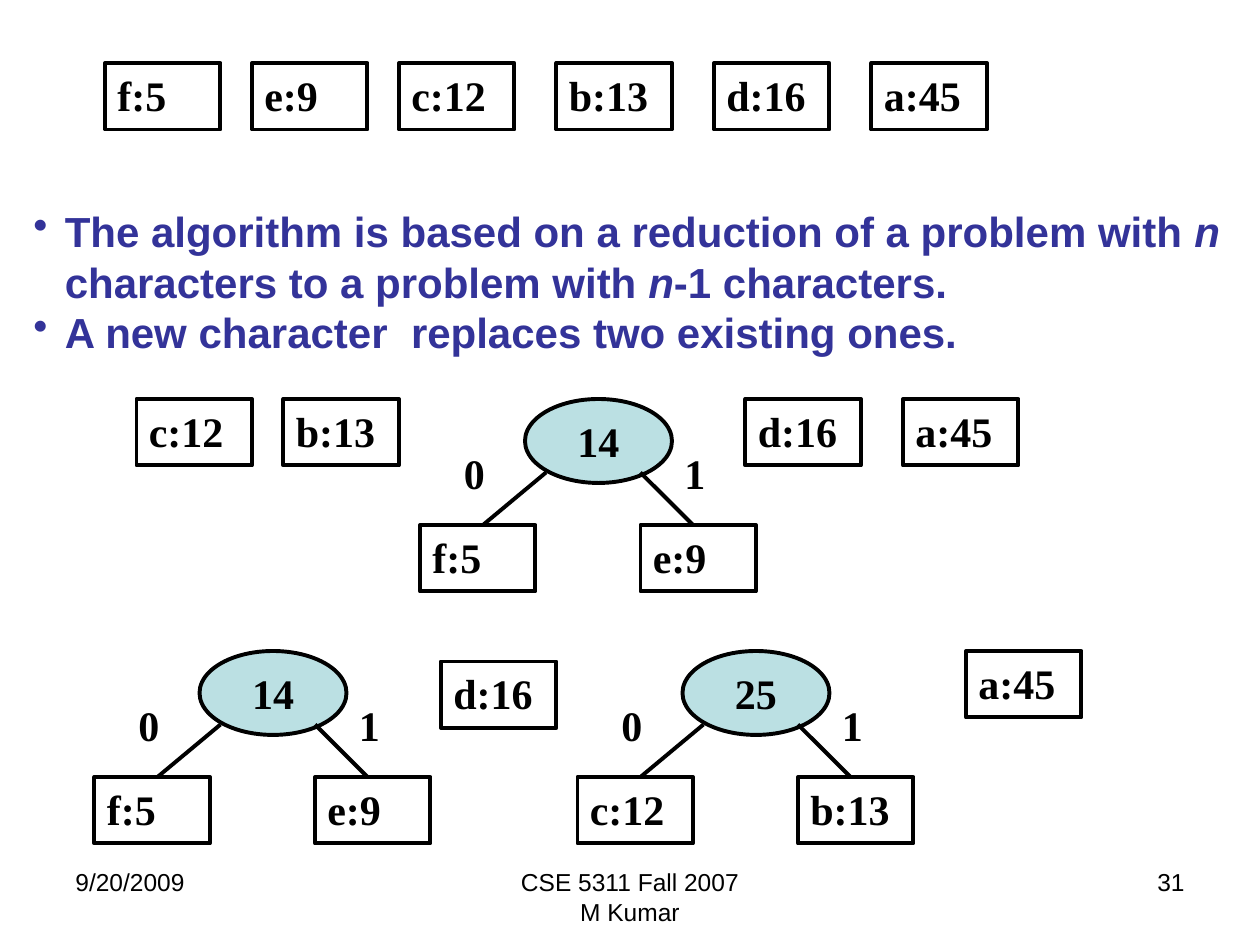
from dataclasses import dataclass

import pptx
import pptx.dml.color
import pptx.enum.shapes
import pptx.enum.text
import pptx.oxml
import pptx.oxml.ns
import pptx.util
from lxml import etree

Pt = pptx.util.Pt
RGB = pptx.dml.color.RGBColor.from_string
SHAPE = pptx.enum.shapes.MSO_SHAPE
ALIGN = pptx.enum.text.PP_ALIGN
FIT = pptx.enum.text.MSO_AUTO_SIZE
ANCHOR = pptx.enum.text.MSO_ANCHOR


@dataclass(frozen=True)
class Theme:
    ink: str = "000000"
    paper: str = "FFFFFF"
    node: str = "BBE0E3"
    statement: str = "333399"
    sans: str = "Arial"
    serif: str = "Times New Roman"
    body: float = 24
    footer: float = 14
    stroke: float = 2.25


THEME = Theme()
LEAF_WIDTH, LEAF_HEIGHT = 66, 38


def add_span(para, text, font, size, color, bold=False, italic=False):
    span = para.add_run()
    span.text = text
    span.font.name = font
    span.font.size = Pt(size)
    span.font.bold = bold
    span.font.italic = italic
    span.font.color.rgb = RGB(color)


def add_box(shapes, kind, left, top, width, height, text, line, fill=None):
    box = shapes.add_shape(kind, Pt(left), Pt(top), Pt(width), Pt(height))
    box.shadow.inherit = False
    if fill:
        box.fill.solid()
        box.fill.fore_color.rgb = RGB(fill)
    else:
        box.fill.background()
    box.line.color.rgb = RGB(line)
    box.line.width = Pt(THEME.stroke)
    para = box.text_frame.paragraphs[0]
    add_span(para, text, THEME.serif, THEME.body, THEME.ink, bold=True)
    return box


def add_text_box(shapes, text, left, top, width, line):
    """A box that grows with its left-aligned text."""
    box = add_box(shapes, SHAPE.RECTANGLE, left, top, width, LEAF_HEIGHT, text, line)
    box.text_frame.word_wrap = True
    box.text_frame.auto_size = FIT.SHAPE_TO_FIT_TEXT
    box.text_frame.vertical_anchor = ANCHOR.TOP
    box.text_frame.paragraphs[0].alignment = ALIGN.LEFT


def add_leaf(shapes, text, left, top):
    add_text_box(shapes, text, left, top, LEAF_WIDTH, THEME.ink)


def add_branch(shapes, start, end):
    branch = shapes.add_connector(
        pptx.enum.shapes.MSO_CONNECTOR.STRAIGHT, *map(Pt, start + end))
    branch.line.color.rgb = RGB(THEME.ink)
    branch.line.width = Pt(THEME.stroke)
    etree.SubElement(branch.element.spPr, pptx.oxml.ns.qn("a:effectLst"))


def add_leaves(shapes, top, leaves):
    for text, left in leaves:
        add_leaf(shapes, text, left, top)


def add_tree(shapes, left, top, total, low, high):
    """A merged node with its 0 branch on the left and 1 branch on the right."""
    for bit, offset in (("1", 144), ("0", 18)):
        add_text_box(shapes, bit, left + offset, top + 24, 30, THEME.paper)
    root = add_box(shapes, SHAPE.OVAL, left + 60, top, 84, 48, total, THEME.ink, THEME.node)
    root.text_frame.word_wrap = False
    root.text_frame.vertical_anchor = ANCHOR.MIDDLE
    root.text_frame.paragraphs[0].alignment = ALIGN.CENTER
    for text, offset in ((low, 0), (high, 126)):
        add_leaf(shapes, text, left + offset, top + 72)
    for start, end in ((72, 36), (126, 156)):
        add_branch(shapes, (left + start, top + 42), (left + end, top + 72))


def add_statements(slide, left, top, width, height, statements):
    """Bulleted paragraphs; every second span of a statement is italic."""
    box = slide.shapes.add_textbox(Pt(left), Pt(top), Pt(width), Pt(height))
    frame = box.text_frame
    frame.word_wrap = True
    frame.auto_size = FIT.SHAPE_TO_FIT_TEXT
    for index, parts in enumerate(statements):
        para = frame.add_paragraph() if index else frame.paragraphs[0]
        para.level = 2
        para.line_spacing = Pt(28.8)
        for number, text in enumerate(parts):
            add_span(para, text, THEME.sans, THEME.body, THEME.statement,
                     bold=True, italic=number % 2 == 1)
        properties = para._p.get_or_add_pPr()
        properties.set("marL", str(Pt(72)))
        properties.set("indent", str(Pt(-18)))
        bullet = etree.SubElement(properties, pptx.oxml.ns.qn("a:buChar"))
        bullet.set("char", "•")


def add_footer(slide, top, height):
    parts = (
        (36, 168, ALIGN.LEFT, ["9/20/2009"]),
        (246, 228, ALIGN.CENTER, ["CSE 5311 Fall 2007", "M Kumar"]),
        (516, 168, ALIGN.RIGHT, ["31"]),
    )
    for left, width, alignment, lines in parts:
        box = slide.shapes.add_textbox(Pt(left), Pt(top), Pt(width), Pt(height))
        box.text_frame.word_wrap = True
        for index, text in enumerate(lines):
            para = box.text_frame.add_paragraph() if index else box.text_frame.paragraphs[0]
            para.alignment = alignment
            add_span(para, text, THEME.sans, THEME.footer, THEME.ink)


def add_huffman_slide(deck):
    slide = deck.slides.add_slide(deck.slide_layouts[6])
    add_footer(slide, 492, 37.5)

    queue = slide.shapes.add_group_shape().shapes
    add_leaves(queue, 36, [("f:5", 60), ("e:9", 144), ("c:12", 228),
                           ("b:13", 318), ("d:16", 408), ("a:45", 498)])

    merges = slide.shapes.add_group_shape().shapes
    add_leaves(merges, 228, [("c:12", 78), ("b:13", 162), ("d:16", 426), ("a:45", 516)])
    add_tree(merges, 240, 228, "14", "f:5", "e:9")
    add_tree(merges, 54, 372, "14", "f:5", "e:9")
    add_leaf(merges, "d:16", 252, 378)
    add_tree(merges, 330, 372, "25", "c:12", "b:13")
    add_leaf(merges, "a:45", 552, 372)

    add_statements(slide, -42, 114, 762, 93.6, [
        ["The algorithm is based on a reduction of a problem with ", "n",
         " characters to a problem with ", "n", "-1 characters."],
        ["A new character  replaces two existing ones."],
    ])


def main():
    deck = pptx.Presentation()
    deck.slide_width, deck.slide_height = Pt(720), Pt(540)
    add_huffman_slide(deck)
    deck.save("out.pptx")


if __name__ == "__main__":
    main()
